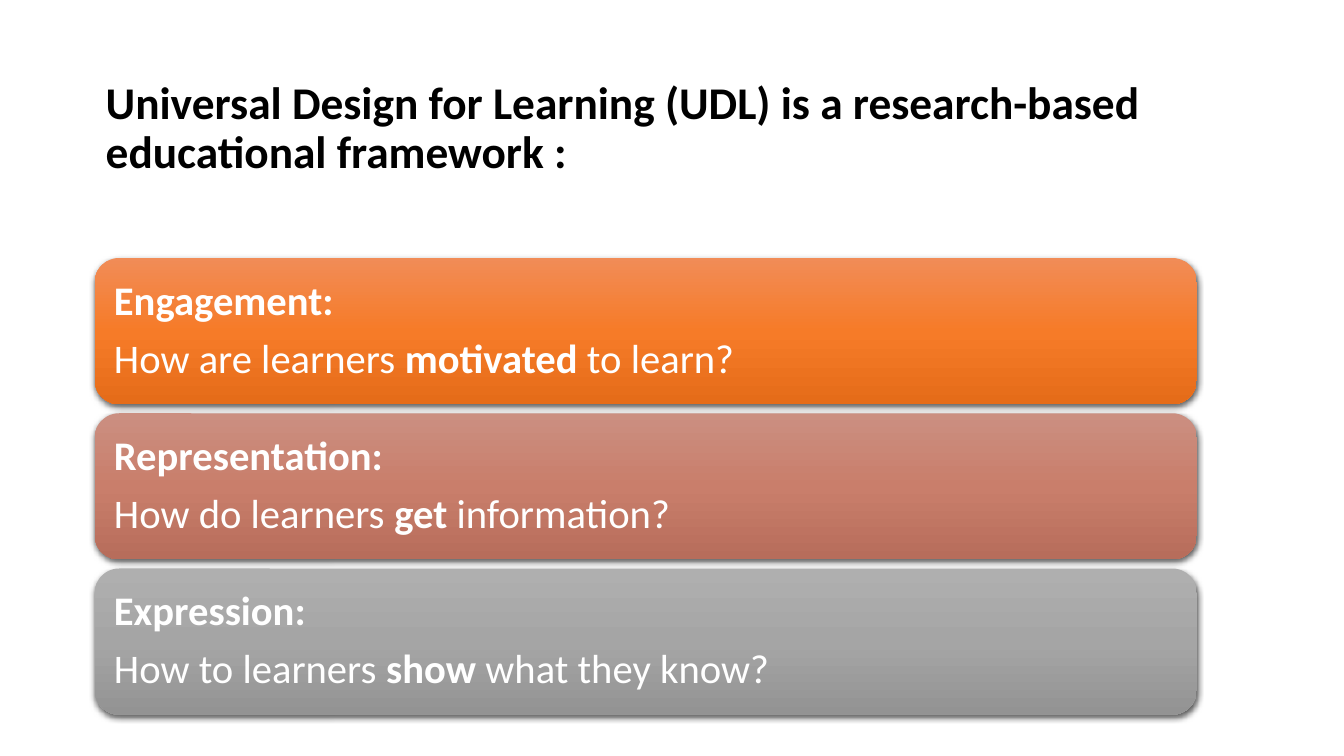
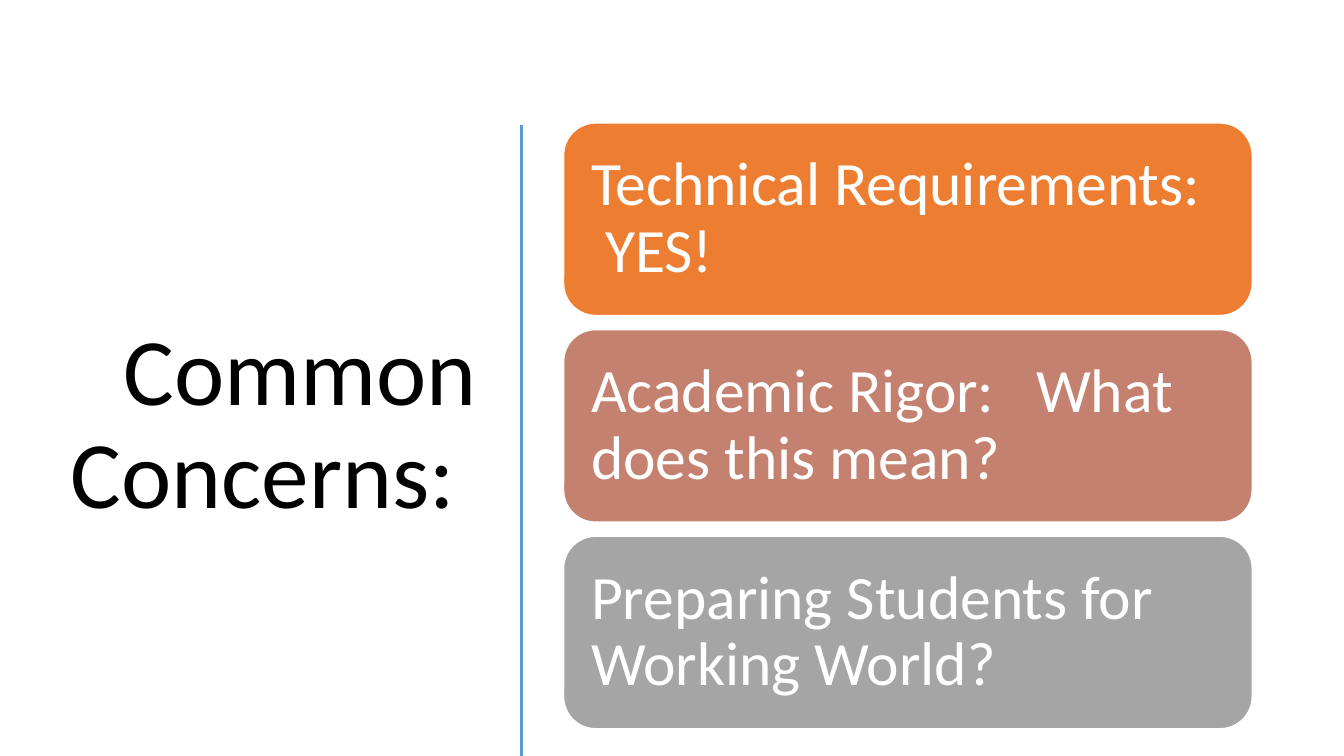
from copy import deepcopy

from lxml import etree
from pptx import Presentation
from pptx import util as u
from pptx.dml.color import RGBColor
from pptx.enum import shapes, text
from pptx.oxml.ns import qn

# Content: text between stars is bold
FRAME = "Universal Design for Learning (UDL) is a research-based educational framework :"
GOALS = [
    ["*Engagement:*", "How are learners *motivated* to learn?"],
    ["*Representation:*", "How do learners *get* information?"],
    ["*Expression:*", "How to learners *show* what they know?"],
]
HEAD = "Common Concerns: "
ISSUES = [
    ["Technical Requirements:   YES!"],
    ["Academic Rigor:   What does this mean?"],
    ["Preparing Students for Working World?"],
]

# Shared style
FONT, BLACK, WHITE, BLUE = "Calibri", "000000", "FFFFFF", "5B9BD5"
FLAT = [["ED7D31"], ["C48170"], ["A5A5A5"]]
SHADED = [
    ["F18C57", "F67B28", "E56C19"],
    ["CB8F81", "C97E6B", "B76D5B"],
    ["AFAFAF", "A5A5A5", "939393"],
]
WIDE, HIGH = 13.33, 7.5


def rgb(code):
    return RGBColor.from_string(code)


def write(shape, lines, size, color=BLACK, inset=0.1, align="LEFT", anchor="MIDDLE", gap=0):
    """Fill a shape with paragraphs; starred parts become bold."""
    frame = shape.text_frame
    frame.word_wrap = True
    frame.vertical_anchor = text.MSO_ANCHOR[anchor]
    frame.margin_left = frame.margin_right = u.Inches(inset)
    frame.margin_top = frame.margin_bottom = u.Inches(inset)
    for n, line in enumerate(lines):
        para = frame.add_paragraph() if n else frame.paragraphs[0]
        para.alignment = text.PP_ALIGN[align]
        para.line_spacing = 0.9
        para.space_before = u.Pt(gap if n else 0)
        for k, part in enumerate(line.split("*")):
            if part:
                run = para.add_run()
                run.text = part
                run.font.name, run.font.size = FONT, u.Pt(size)
                run.font.bold = k % 2 == 1
                run.font.color.rgb = rgb(color)


def title(slide, words, box, size, **style):
    write(slide.shapes.add_textbox(*map(u.Inches, box)), [words], size, **style)


def shade(card, colors):
    """Vertical gradient with evenly spaced stops."""
    card.fill.gradient()
    card.fill.gradient_angle = 270
    stops = card.element.spPr.find(".//" + qn("a:gsLst"))
    stops.insert(1, deepcopy(stops[0]))
    for n, (stop, color) in enumerate(zip(card.fill.gradient_stops, colors)):
        stop.position = n / 2
        stop.color.rgb = rgb(color)


def cast(card):
    """Soft black shadow below the card."""
    effects = card.element.spPr.find(qn("a:effectLst"))
    drop = etree.SubElement(effects, qn("a:outerShdw"), blurRad=str(u.Pt(4.5)),
                            dist=str(u.Pt(1.5)), dir="5400000", rotWithShape="0")
    tint = etree.SubElement(drop, qn("a:srgbClr"), val=BLACK)
    etree.SubElement(tint, qn("a:alpha"), val="63000")


def stack(slide, items, fills, box, space, **style):
    """Equal rounded cards, one below the other; box is that of the first."""
    left, top, width, height = box
    for n, (lines, colors) in enumerate(zip(items, fills)):
        place = left, top + n * (height + space), width, height
        card = slide.shapes.add_shape(shapes.MSO_SHAPE.ROUNDED_RECTANGLE, *map(u.Inches, place))
        card.shadow.inherit = False
        if len(colors) > 1:
            shade(card, colors)
            cast(card)
            card.line.fill.background()
        else:
            card.fill.solid()
            card.fill.fore_color.rgb = rgb(colors[0])
            card.line.color.rgb = rgb(WHITE)
            card.line.width = u.Pt(1)
        write(card, lines, color=WHITE, **style)


def rule(slide, x, top, end):
    line = slide.shapes.add_connector(shapes.MSO_CONNECTOR.STRAIGHT,
                                      *map(u.Inches, (x, top, x, end)))
    line.line.color.rgb = rgb(BLUE)
    line.line.width = u.Pt(2)
    etree.SubElement(line.element.spPr, qn("a:effectLst"))


def main():
    deck = Presentation()
    deck.slide_width, deck.slide_height = u.Inches(WIDE), u.Inches(HIGH)
    blank = deck.slide_layouts[6]

    # Framework
    slide = deck.slides.add_slide(blank)
    title(slide, f"*{FRAME}*", (0.95, 0.7, 11.09, 1.1), 32.4, anchor="TOP")
    stack(slide, GOALS, SHADED, (0.94, 2.56, 10.93, 1.45), 0.09, size=29, inset=0.12, gap=10)

    # Concerns
    slide = deck.slides.add_slide(blank)
    title(slide, HEAD, (0.52, 1.17, 4.31, 6.11), 68, align="RIGHT")
    rule(slide, 5.17, 1.24, HIGH)
    stack(slide, ISSUES, FLAT, (5.59, 1.22, 6.83, 1.91), 0.14, size=44, inset=0.18)

    deck.save("out.pptx")


if __name__ == "__main__":
    main()
